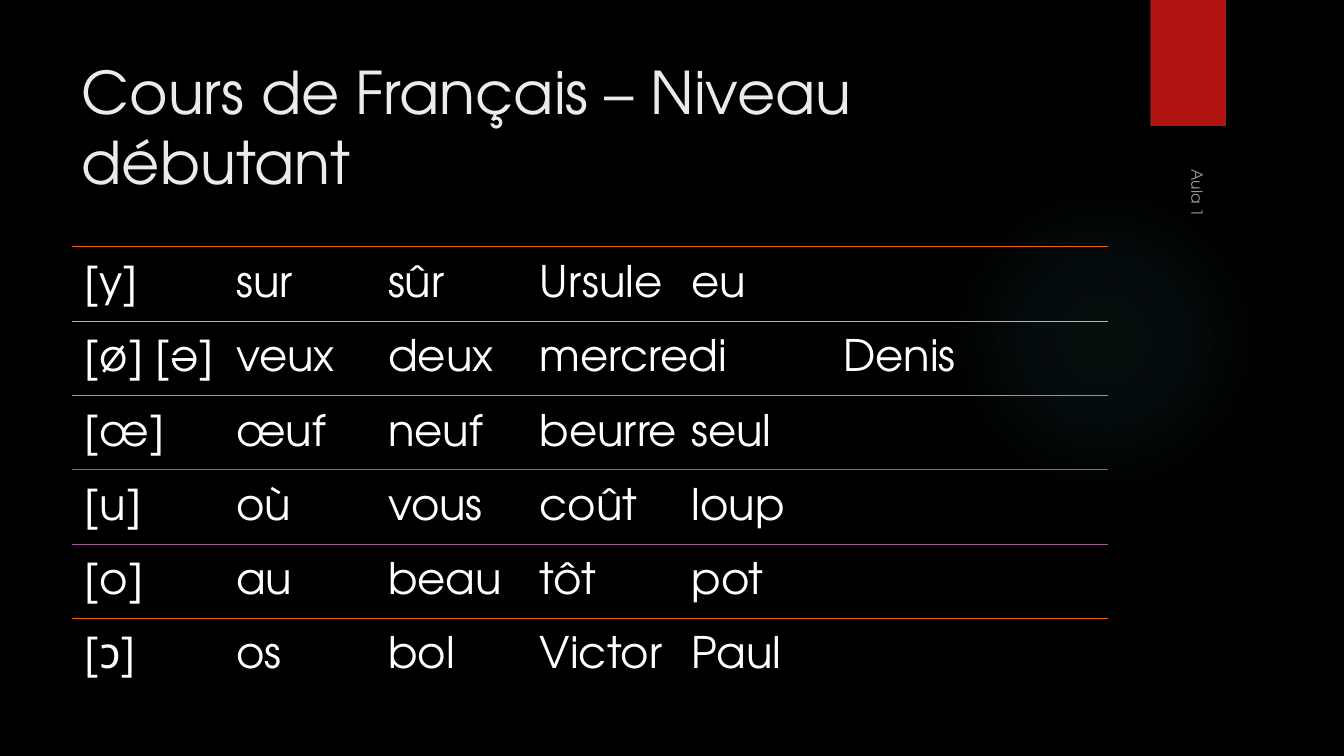
"""Builds a French pronunciation slide with ruled rows of example words."""
from pptx import Presentation
from pptx.dml.color import RGBColor
from pptx.enum.shapes import MSO_CONNECTOR, MSO_SHAPE
from pptx.enum.text import MSO_ANCHOR, MSO_AUTO_SIZE, PP_ALIGN
from pptx.oxml import parse_xml
from pptx.oxml.ns import nsdecls, qn
from pptx.oxml.xmlchemy import OxmlElement
from pptx.util import Inches, Pt

LEFT, TOP, BOTTOM = PP_ALIGN.LEFT, MSO_ANCHOR.TOP, MSO_ANCHOR.BOTTOM
NO_AUTOFIT = MSO_AUTO_SIZE.NONE
STRAIGHT = MSO_CONNECTOR.STRAIGHT
ELLIPSE, RECTANGLE = MSO_SHAPE.OVAL, MSO_SHAPE.RECTANGLE
FONT = "TeX Gyre Adventor"
COLORS = {
    "background": "000000", "title": "EBEBEB", "text": "FFFFFF",
    "ribbon": "B01513", "glow": "50B9C1", "orange": "EA6312",
    "yellow": "E6B729", "green": "6AAC90", "blue": "54849A", "purple": "9E5E9B",
}
ROWS = [
    ("orange", ["[y]", "sur", "sûr", "Ursule", "eu"]),
    ("yellow", ["[ø] [ə]", "veux", "deux", "mercredi", "Denis"]),
    ("green", ["[œ]", "œuf", "neuf", "beurre", "seul"]),
    ("blue", ["[u]", "où", "vous", "coût", "loup"]),
    ("purple", ["[o]", "au", "beau", "tôt", "pot"]),
    ("orange", ["[ɔ]", "os", "bol", "Victor", "Paul"]),
]
ROW_LEFT, ROW_TOP, ROW_WIDTH, ROW_HEIGHT = 0.71, 2.45, 10.28, 0.737
ROW_INSET, TAB_STEP, TAB_COUNT = 0.13, 1.505, 5


class SlideBuilder:
    """Holds the style and the current slide."""

    def __init__(self, deck):
        self.slide = deck.slides.add_slide(deck.slide_layouts[5])
        fill = self.slide.background.fill
        fill.solid()
        fill.fore_color.rgb = self.color("background")

    def color(self, name):
        """Return the named colour."""
        return RGBColor.from_string(COLORS[name])

    def set_text(self, box, text, size, color, anchor=TOP):
        """Put one styled paragraph in a box and return it."""
        frame = box.text_frame
        frame.text = text
        frame.word_wrap = True
        frame.auto_size = NO_AUTOFIT
        frame.vertical_anchor = anchor
        para = frame.paragraphs[0]
        para.alignment = LEFT
        for span in para.runs:
            span.font.name = FONT
            span.font.size = Pt(size)
            span.font.color.rgb = self.color(color)
        return para

    def title(self, text, left, top, width, height):
        """Place and format the title."""
        box = self.slide.shapes.title
        box.left, box.top = Inches(left), Inches(top)
        box.width, box.height = Inches(width), Inches(height)
        self.set_text(box, text, 42, "title")

    def shape(self, kind, color, left, top, width, height):
        """Draw a plain filled shape without an outline."""
        shape = self.slide.shapes.add_shape(
            kind, Inches(left), Inches(top), Inches(width), Inches(height))
        shape.shadow.inherit = False
        shape.fill.solid()
        shape.fill.fore_color.rgb = self.color(color)
        shape.line.fill.background()
        return shape

    def glow(self, left, top, size):
        """Draw a round glow that fades to its edge."""
        shape = self.shape(ELLIPSE, "glow", left, top, size, size)
        stops = "".join(
            f'<a:gs pos="{place * 1000}"><a:srgbClr val="{COLORS["glow"]}">'
            f'<a:alpha val="{alpha * 1000}"/></a:srgbClr></a:gs>'
            for place, alpha in [(0, 7), (36, 6), (69, 0), (100, 0)])
        gradient = parse_xml(
            f'<a:gradFill {nsdecls("a")} rotWithShape="1"><a:gsLst>{stops}</a:gsLst>'
            '<a:path path="circle"><a:fillToRect l="50000" t="50000" r="50000" '
            'b="50000"/></a:path></a:gradFill>')
        properties = shape.element.spPr
        properties.replace(properties.find(qn("a:solidFill")), gradient)

    def side_label(self, text, left, top, width, height):
        """Add a translucent label that reads downwards."""
        box = self.slide.shapes.add_textbox(
            Inches(left), Inches(top), Inches(width), Inches(height))
        box.rotation = 90
        para = self.set_text(box, text, 11, "text", BOTTOM)
        para.space_after = Pt(6)
        alpha = OxmlElement("a:alpha")
        alpha.set("val", "60000")
        next(para._p.iter(qn("a:srgbClr"))).append(alpha)

    def rule(self, color, top):
        """Draw a thin horizontal rule."""
        line = self.slide.shapes.add_connector(
            STRAIGHT, Inches(ROW_LEFT), Inches(top),
            Inches(ROW_LEFT + ROW_WIDTH), Inches(top))
        line.line.color.rgb = self.color(color)
        line.line.width = Pt(0.75)
        line.element.spPr.append(OxmlElement("a:effectLst"))

    def word_row(self, words, top):
        """Add a sound and its example words at even tab stops."""
        box = self.slide.shapes.add_textbox(
            Inches(ROW_LEFT), Inches(top), Inches(ROW_WIDTH), Inches(ROW_HEIGHT))
        frame = box.text_frame
        frame.margin_left = frame.margin_right = Inches(ROW_INSET)
        frame.margin_top = frame.margin_bottom = Inches(ROW_INSET)
        para = self.set_text(box, "\t".join(words), 31, "text")
        para.line_spacing = 0.9
        tabs = OxmlElement("a:tabLst")
        for number in range(1, TAB_COUNT + 1):
            tab = OxmlElement("a:tab")
            tab.set("pos", str(Inches(number * TAB_STEP)))
            tab.set("algn", "l")
            tabs.append(tab)
        para._p.get_or_add_pPr().append(tabs)


def main():
    """Build and save the deck."""
    deck = Presentation()
    deck.slide_width, deck.slide_height = Inches(13.33), Inches(7.5)
    page = SlideBuilder(deck)
    page.glow(9.41, 1.83, 3.08)
    page.shape(RECTANGLE, "ribbon", 11.41, 0, 0.75, 1.25)
    page.title("Cours de Français – Niveau débutant", 0.71, 0.5, 10.29, 1.53)
    page.side_label("Aula 1", 9.79, 3.53, 4.22, 0.33)
    for index, (color, words) in enumerate(ROWS):
        top = ROW_TOP + index * ROW_HEIGHT
        page.rule(color, top)
        page.word_row(words, top)
    deck.save("out.pptx")


if __name__ == "__main__":
    main()
